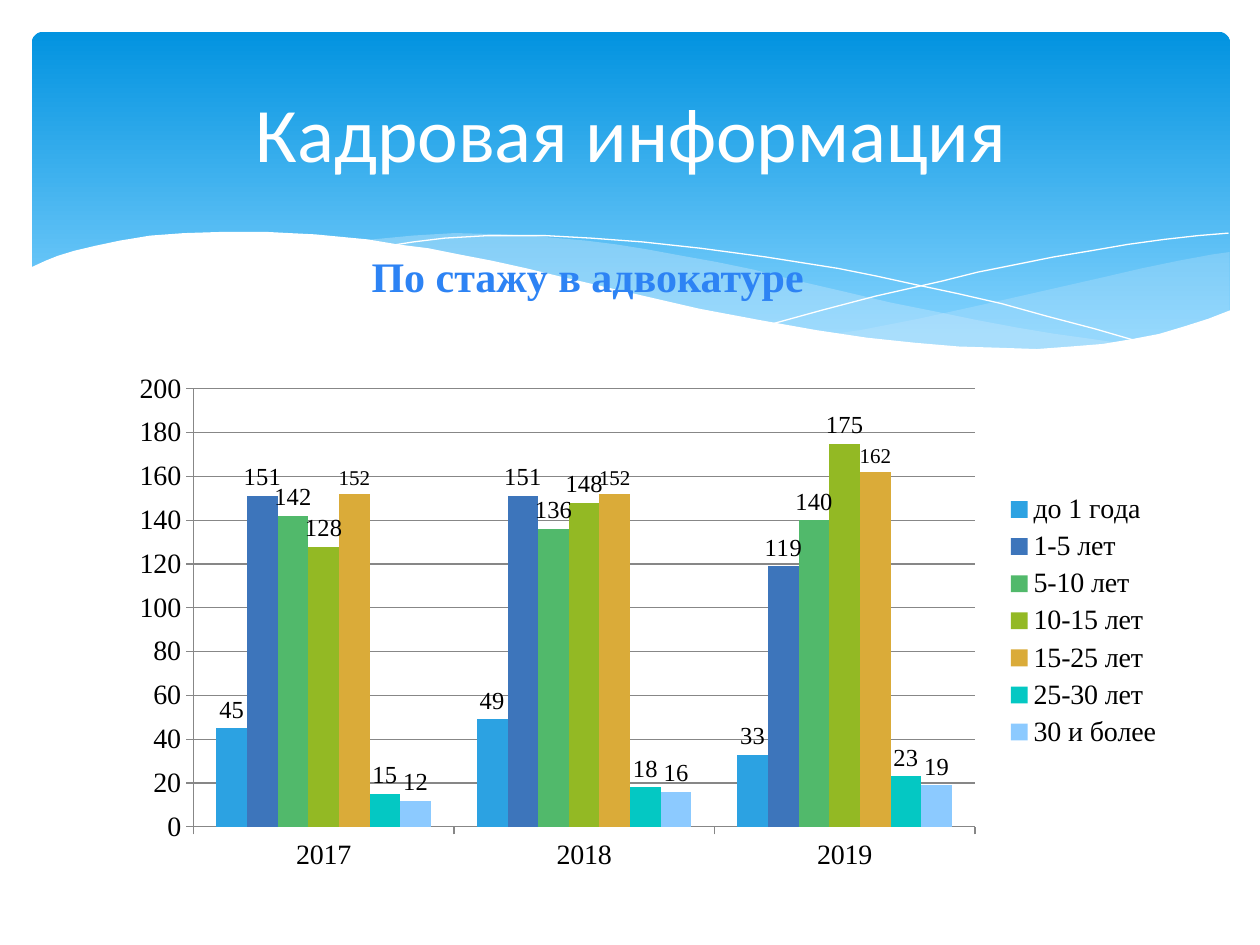
"""Build the staff slide: a wave banner and a column chart of years in legal practice."""
from lxml import etree
from pptx import Presentation
from pptx.chart.data import CategoryChartData
from pptx.dml.color import RGBColor
from pptx.enum.chart import XL_CHART_TYPE as ChartType, XL_LABEL_POSITION as LabelPos
from pptx.enum.chart import XL_LEGEND_POSITION as LegendPos, XL_TICK_MARK as Tick
from pptx.enum.shapes import MSO_SHAPE as Shape
from pptx.enum.text import MSO_ANCHOR as Anchor, PP_ALIGN as Align
from pptx.oxml import parse_xml
from pptx.oxml.ns import nsdecls, qn
from pptx.util import Cm, Pt

WHITE = RGBColor(0xFF, 0xFF, 0xFF)
BLACK = RGBColor(0x00, 0x00, 0x00)
GRAY = RGBColor(0x87, 0x87, 0x87)
BANNER_TOP = RGBColor(0x02, 0x93, 0xE0)
BANNER_END = RGBColor(0x83, 0xD3, 0xFE)
PALE_BLUE = RGBColor(0xC6, 0xE7, 0xFC)
SUBTITLE_BLUE = RGBColor(0x2D, 0x83, 0xF4)
SERIF = "Times New Roman"
SANS = "Calibri"
GRID = Cm(0.0254)

deck = Presentation()
deck.slide_width, deck.slide_height = Cm(25.4), Cm(19.05)
page = deck.slides.add_slide(deck.slide_layouts[6])


def add_text(text, *, at, size, font, color, bold=False, align=Align.LEFT, anchor=Anchor.TOP):
    box = page.shapes.add_textbox(*map(Cm, at))
    box.text_frame.word_wrap = True
    box.text_frame.vertical_anchor = anchor
    para = box.text_frame.paragraphs[0]
    para.alignment = align
    span = para.add_run()
    span.text = text
    span.font.size, span.font.name, span.font.bold = Pt(size), font, bold
    span.font.color.rgb = color


def add_wave(points, fill=None, opacity=100):
    builder = page.shapes.build_freeform(*points[0], scale=GRID)
    builder.add_line_segments(points[1:], close=fill is not None)
    wave = builder.convert_to_shape()
    wave.shadow.inherit = False
    if fill is None:
        wave.fill.background()
        wave.line.color.rgb = WHITE
        wave.line.width = Pt(0)
        return
    wave.fill.solid()
    wave.fill.fore_color.rgb = fill
    wave.line.fill.background()
    if opacity < 100:
        color = wave.fill._xPr.find(qn("a:solidFill"))[0]
        etree.SubElement(color, qn("a:alpha"), val=str(opacity * 1000))


banner = page.shapes.add_shape(Shape.ROUNDED_RECTANGLE, Cm(0.64), Cm(0.64), Cm(24.16), Cm(6.86))
banner.adjustments[0] = 0.034
banner.shadow.inherit = False
banner.line.fill.background()
banner.fill.gradient()
banner.fill.gradient_angle = 270
for stop, color, position in zip(banner.fill.gradient_stops, (BANNER_TOP, BANNER_END), (0, 0.9)):
    stop.color.rgb = color
    stop.position = position

right_wave = [
    (976, 200), (962, 202), (935, 207), (906, 213), (876, 220), (832, 230), (779, 242),
    (729, 253), (683, 262), (661, 265), (691, 269), (719, 272), (745, 275), (769, 277),
    (803, 278), (835, 277), (863, 275), (889, 272), (913, 267), (935, 262), (949, 257),
    (963, 252), (976, 247)]
middle_wave = [
    (893, 273), (866, 269), (837, 265), (807, 260), (775, 254), (741, 247), (706, 240),
    (668, 231), (629, 222), (598, 214), (569, 208), (541, 203), (514, 198), (489, 194),
    (465, 191), (442, 189), (420, 187), (399, 186), (361, 185), (328, 187), (286, 191),
    (323, 196), (362, 203), (404, 211), (449, 222), (491, 232), (530, 240), (566, 248),
    (601, 255), (634, 261), (665, 266), (695, 270), (722, 274), (748, 276), (773, 277),
    (807, 278), (838, 278), (867, 276)]
falling_line = [
    (309, 195), (328, 192), (353, 189), (387, 187), (433, 187), (469, 189), (510, 192),
    (556, 197), (608, 204), (665, 213), (695, 219), (727, 226), (760, 233), (795, 241),
    (831, 251), (869, 261), (907, 272)]
rising_line = [
    (613, 257), (653, 246), (695, 235), (748, 223), (776, 216), (806, 210), (836, 204),
    (866, 199), (895, 194), (924, 190), (951, 187), (975, 185)]
white_wave = [
    (977, 246), (959, 253), (940, 259), (920, 265), (899, 269), (875, 273), (850, 275),
    (823, 277), (793, 276), (761, 275), (726, 272), (688, 268), (648, 262), (603, 254),
    (555, 245), (503, 233), (447, 220), (418, 213), (391, 207), (365, 202), (340, 197),
    (316, 194), (292, 190), (271, 188), (250, 186), (230, 185), (211, 184), (177, 184),
    (146, 185), (119, 187), (95, 191), (76, 195), (59, 199), (46, 203), (36, 207),
    (23, 213), (23, 329), (977, 329)]
add_wave(right_wave, PALE_BLUE, 29)
add_wave(middle_wave, PALE_BLUE, 40)
add_wave(falling_line)
add_wave(rising_line)
add_wave(white_wave, WHITE)

experience = [
    ("до 1 года", (45, 49, 33), RGBColor(0x2C, 0xA2, 0xE2), 14),
    ("1-5 лет", (151, 151, 119), RGBColor(0x3D, 0x75, 0xBB), 14),
    ("5-10 лет", (142, 136, 140), RGBColor(0x51, 0xB9, 0x6B), 14),
    ("10-15 лет", (128, 148, 175), RGBColor(0x93, 0xB9, 0x24), 14),
    ("15-25 лет", (152, 152, 162), RGBColor(0xDA, 0xAB, 0x39), 12),
    ("25-30 лет", (15, 18, 23), RGBColor(0x04, 0xC8, 0xC3), 14),
    ("30 и более", (12, 16, 19), RGBColor(0x8C, 0xCA, 0xFF), 14)]
data = CategoryChartData()
data.categories = ["2017", "2018", "2019"]
for name, values, _, _ in experience:
    data.add_series(name, values)
chart = page.shapes.add_chart(
    ChartType.COLUMN_CLUSTERED, Cm(2.41), Cm(7.32), Cm(21.29), Cm(10.39), data).chart
chart.has_title = False
chart.font.size, chart.font.name = Pt(18), SANS
chart.font.color.rgb = BLACK
chart.has_legend = True
chart.legend.position = LegendPos.RIGHT
chart.legend.include_in_layout = False
for part in (chart.legend.font, chart.category_axis.tick_labels.font, chart.value_axis.tick_labels.font):
    part.size, part.name = Pt(16), SERIF
    part.color.rgb = BLACK
for axis in (chart.category_axis, chart.value_axis):
    axis.major_tick_mark, axis.minor_tick_mark = Tick.OUTSIDE, Tick.NONE
    axis.format.line.color.rgb = GRAY
chart.value_axis.minimum_scale, chart.value_axis.maximum_scale = 0, 200
chart.value_axis.major_unit = 20
chart.value_axis.has_major_gridlines = True
chart.value_axis.major_gridlines.format.line.color.rgb = GRAY

plot = chart.plots[0]
plot.vary_by_categories = False
plot.gap_width, plot.overlap = 150, 0
for series, (_, _, color, label_size) in zip(plot.series, experience):
    series.format.fill.solid()
    series.format.fill.fore_color.rgb = color
    labels = series.data_labels
    labels.show_value = True
    labels.position = LabelPos.OUTSIDE_END
    labels.font.size, labels.font.name = Pt(label_size), SERIF
    labels.font.color.rgb = BLACK

plot_area = chart._chartSpace.chart.plotArea
for old_layout in plot_area.findall(qn("c:layout")):
    plot_area.remove(old_layout)
frame = "".join(f'<c:{key} val="{value}"/>' for key, value in (
    ("layoutTarget", "inner"), ("xMode", "edge"), ("yMode", "edge"),
    ("x", 0.07), ("y", 0.05), ("w", 0.74), ("h", 0.85)))
plot_area.insert(0, parse_xml(
    f'<c:layout {nsdecls("c")}><c:manualLayout>{frame}</c:manualLayout></c:layout>'))

add_text("Кадровая информация", at=(1.3, 0.91, 22.86, 3.48), size=44, font=SANS,
         color=WHITE, align=Align.CENTER, anchor=Anchor.MIDDLE)
add_text("По стажу в адвокатуре", at=(7.24, 4.93, 11, 1.27), size=24, font=SERIF,
         color=SUBTITLE_BLUE, bold=True)

deck.save("out.pptx")
